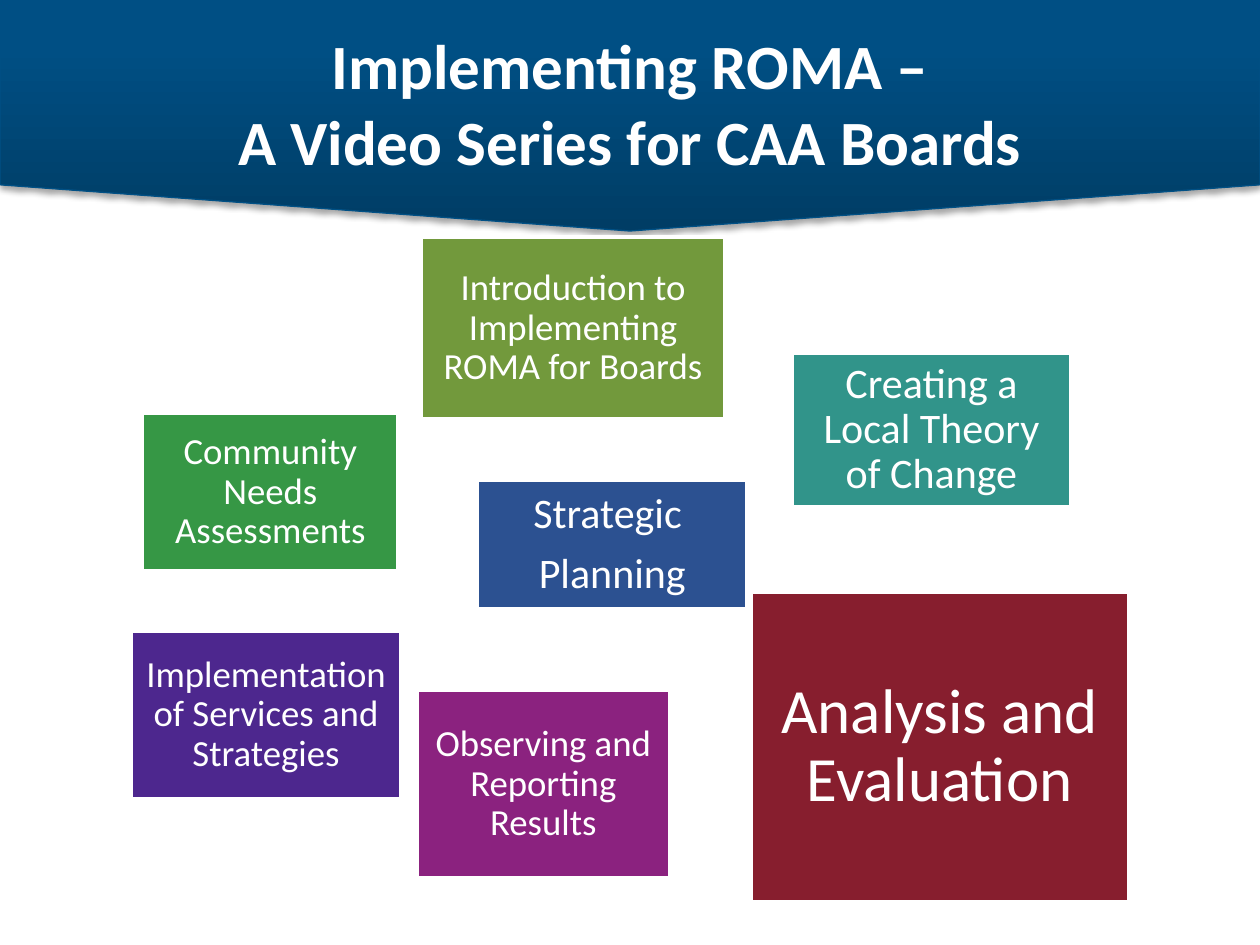
import copy

import pptx
import pptx.dml.color
import pptx.enum.shapes
import pptx.enum.text
import pptx.oxml
import pptx.oxml.ns
import pptx.util

Pt = pptx.util.Pt
RGBColor = pptx.dml.color.RGBColor

WHITE = RGBColor(0xFF, 0xFF, 0xFF)
BANNER_DARK = RGBColor(0x00, 0x3D, 0x65)
BANNER_MIDDLE = RGBColor(0x00, 0x4F, 0x84)
BANNER_LIGHT = RGBColor(0x00, 0x50, 0x84)
BANNER_LINE = RGBColor(0x00, 0x50, 0x85)
OLIVE = RGBColor(0x72, 0x99, 0x3C)
GREEN = RGBColor(0x36, 0x97, 0x45)
TEAL = RGBColor(0x31, 0x94, 0x8A)
BLUE = RGBColor(0x2C, 0x51, 0x91)
VIOLET = RGBColor(0x4D, 0x27, 0x8E)
MAGENTA = RGBColor(0x8B, 0x22, 0x7F)
CRIMSON = RGBColor(0x87, 0x1E, 0x2E)

TOPICS = [
    ((240.5, 135.5, 174, 104), OLIVE, 21, ["Introduction to Implementing ROMA for Boards"]),
    ((81.4, 236.2, 146.2, 90), GREEN, 21, ["Community Needs Assessments"]),
    ((452.5, 201.8, 159.5, 87.8), TEAL, 24, ["Creating a Local Theory of Change"]),
    ((272.9, 274.5, 154, 73.4), BLUE, 24, ["Strategic ", "Planning"]),
    ((75, 360.8, 154, 95.6), VIOLET, 21, ["Implementation of Services and Strategies"]),
    ((238.5, 394.6, 144, 107.2), MAGENTA, 21, ["Observing and Reporting Results"]),
    ((429.2, 338.4, 215.6, 177), CRIMSON, 36, ["Analysis and Evaluation"]),
]


class SlideBuilder:
    font_name = "Calibri"
    line_spacing = 0.9
    space_ratio = 0.35
    inset_ratio = 0.3

    def __init__(self, presentation):
        self.slide = presentation.slides.add_slide(presentation.slide_layouts[5])

    def add_run(self, paragraph, text, size, bold=False):
        run = paragraph.add_run()
        run.text = text
        run.font.name = self.font_name
        run.font.size = Pt(size)
        run.font.bold = bold
        run.font.color.rgb = WHITE

    def add_shape(self, kind, box, line_color, line_width):
        shape = self.slide.shapes.add_shape(kind, *map(Pt, box))
        shape.shadow.inherit = False
        shape.line.color.rgb = line_color
        shape.line.width = Pt(line_width)
        return shape

    def add_banner(self, box):
        kind = pptx.enum.shapes.MSO_SHAPE.FLOWCHART_OFFPAGE_CONNECTOR
        shape = self.add_shape(kind, box, BANNER_LINE, 0.75)
        shape.fill.gradient()
        shape.fill.gradient_angle = 90
        qualify = pptx.oxml.ns.qn
        properties = shape._element.spPr
        stop_list = properties.find(qualify("a:gradFill")).find(qualify("a:gsLst"))
        stop_list.append(copy.deepcopy(stop_list[-1]))
        colors = [(0, BANNER_DARK), (0.8, BANNER_MIDDLE), (1, BANNER_LIGHT)]
        for stop, (position, color) in zip(shape.fill.gradient_stops, colors):
            stop.position = position
            stop.color.rgb = color
        shadow = pptx.oxml.parse_xml(
            f'<a:outerShdw {pptx.oxml.ns.nsdecls("a")} blurRad="{Pt(3.1)}" '
            f'dist="{Pt(1.8)}" dir="5400000" rotWithShape="0">'
            '<a:srgbClr val="000000"><a:alpha val="35000"/></a:srgbClr></a:outerShdw>'
        )
        properties.find(qualify("a:effectLst")).append(shadow)
        self.slide.shapes._spTree.insert(2, shape._element)

    def add_title(self, box, lines, size):
        title = self.slide.shapes.title
        title.left, title.top, title.width, title.height = map(Pt, box)
        title.text_frame.vertical_anchor = pptx.enum.text.MSO_ANCHOR.MIDDLE
        paragraph = title.text_frame.paragraphs[0]
        paragraph.alignment = pptx.enum.text.PP_ALIGN.CENTER
        for index, line in enumerate(lines):
            if index:
                paragraph.add_line_break()
            self.add_run(paragraph, line, size, bold=True)

    def add_topic(self, box, color, size, lines):
        shape = self.add_shape(pptx.enum.shapes.MSO_SHAPE.RECTANGLE, box, WHITE, 2)
        shape.fill.solid()
        shape.fill.fore_color.rgb = color
        frame = shape.text_frame
        frame.word_wrap = True
        frame.vertical_anchor = pptx.enum.text.MSO_ANCHOR.MIDDLE
        inset = Pt(size * self.inset_ratio)
        frame.margin_left = frame.margin_right = inset
        frame.margin_top = frame.margin_bottom = inset
        for index, line in enumerate(lines):
            paragraph = frame.add_paragraph() if index else frame.paragraphs[0]
            paragraph.alignment = pptx.enum.text.PP_ALIGN.CENTER
            paragraph.line_spacing = self.line_spacing
            paragraph.space_after = Pt(size * self.space_ratio)
            self.add_run(paragraph, line, size)


def main():
    presentation = pptx.Presentation()
    presentation.slide_width = Pt(720)
    presentation.slide_height = Pt(540)
    builder = SlideBuilder(presentation)
    builder.add_banner((0, 0, 720, 132))
    builder.add_title(
        (36, 13.5, 648, 90),
        ["Implementing ROMA –", " A Video Series for CAA Boards "],
        36,
    )
    for topic in TOPICS:
        builder.add_topic(*topic)
    presentation.save("out.pptx")


if __name__ == "__main__":
    main()
